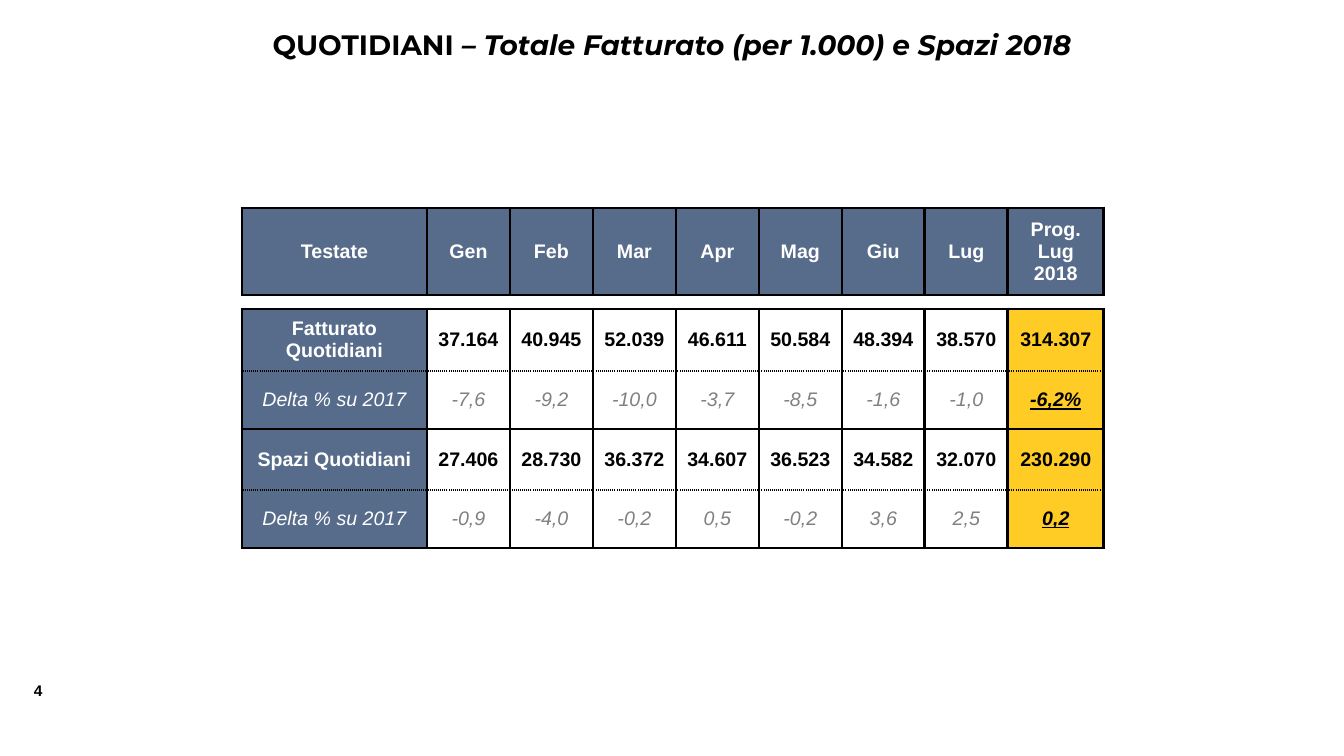
"""Build the slide on 2018 newspaper turnover and spaces."""
from lxml.etree import SubElement
from pptx import Presentation
from pptx.dml.color import RGBColor
from pptx.enum.text import MSO_ANCHOR, PP_ALIGN
from pptx.oxml.ns import qn
from pptx.util import Pt

EMU_PER_PX = 914400 / 100.8
BLACK = RGBColor(0x00, 0x00, 0x00)
WHITE = RGBColor(0xFF, 0xFF, 0xFF)
GREY = RGBColor(0x80, 0x80, 0x80)
BLUE = RGBColor(0x57, 0x6B, 0x8A)
YELLOW = RGBColor(0xFF, 0xCB, 0x25)
THICK, THIN, DOTTED = (2.25, "solid"), (1, "solid"), (1, "sysDot")


def px(n):
    return round(n * EMU_PER_PX)


def add_run(p, text, size, font, color, bold=True, italic=False, underline=False):
    r = p.add_run()
    r.text = text
    r.font.size = Pt(size)
    r.font.name = font
    r.font.color.rgb = color
    r.font.bold = bold
    r.font.italic = italic
    r.font.underline = underline


prs = Presentation()
prs.slide_width, prs.slide_height = px(1344), px(756)
s = prs.slides.add_slide(prs.slide_layouts[6])

number = s.shapes.add_textbox(px(24), px(676), px(42), px(29))
add_run(number.text_frame.paragraphs[0], "4", 11, "Arial", BLACK)

title = s.shapes.add_textbox(px(168), px(23), px(1008), px(44))
title.text_frame.word_wrap = True
p = title.text_frame.paragraphs[0]
p.alignment = PP_ALIGN.CENTER
add_run(p, "QUOTIDIANI ", 20, "Montserrat", BLACK)
add_run(p, "– Totale Fatturato (per 1.000) e Spazi 2018", 20, "Montserrat", BLACK, italic=True)

rows = [
    ["Testate", "Gen", "Feb", "Mar", "Apr", "Mag", "Giu", "Lug", "Prog.\nLug\n2018"],
    [""] * 9,
    ["Fatturato Quotidiani", "37.164", "40.945", "52.039", "46.611", "50.584", "48.394", "38.570", "314.307"],
    ["Delta % su 2017", "-7,6", "-9,2", "-10,0", "-3,7", "-8,5", "-1,6", "-1,0", "-6,2%"],
    ["Spazi Quotidiani", "27.406", "28.730", "36.372", "34.607", "36.523", "34.582", "32.070", "230.290"],
    ["Delta % su 2017", "-0,9", "-4,0", "-0,2", "0,5", "-0,2", "3,6", "2,5", "0,2"],
]
col_widths = [185] + [83] * 7 + [96]
row_heights = [87, 14, 62, 58, 61, 58]
row_edges = [THICK, THICK, THICK, DOTTED, THIN, DOTTED, THICK]
HEADER, GAP, LAST_COL = 0, 1, 8

table = s.shapes.add_table(6, 9, px(242), px(208), px(sum(col_widths)), px(sum(row_heights))).table
table.first_row = table.horz_banding = False
for column, width in zip(table.columns, col_widths):
    column.width = px(width)
for row, height in zip(table.rows, row_heights):
    row.height = px(height)

for i, values in enumerate(rows):
    side = None if i == GAP else THICK
    is_delta = i in (3, 5)
    for j, value in enumerate(values):
        cell = table.cell(i, j)
        is_label = i == HEADER or j == 0
        is_total = j == LAST_COL and not is_label
        cell.vertical_anchor = MSO_ANCHOR.MIDDLE
        padded = is_label and i != GAP
        cell.margin_left = cell.margin_right = px(10 if padded else 0)
        cell.margin_top = cell.margin_bottom = px(5 if padded else 0)

        tcPr = cell._tc.get_or_add_tcPr()
        edges = {"a:lnL": side, "a:lnR": side, "a:lnT": row_edges[i], "a:lnB": row_edges[i + 1]}
        for tag, edge in edges.items():
            ln = SubElement(tcPr, qn(tag))
            if edge is None:
                SubElement(ln, qn("a:noFill"))
                continue
            ln.set("w", str(Pt(edge[0])))
            SubElement(SubElement(ln, qn("a:solidFill")), qn("a:srgbClr"), val=str(BLACK))
            SubElement(ln, qn("a:prstDash"), val=edge[1])

        tf = cell.text_frame
        if i == GAP:
            cell.fill.background()
            SubElement(tf.paragraphs[0]._p, qn("a:endParaRPr"), sz="400")
            continue
        if is_label or is_total:
            cell.fill.solid()
            cell.fill.fore_color.rgb = BLUE if is_label else YELLOW
        else:
            cell.fill.background()

        color = WHITE if is_label else GREY if is_delta and not is_total else BLACK
        for k, line in enumerate(value.split("\n")):
            p = tf.add_paragraph() if k else tf.paragraphs[0]
            p.alignment = PP_ALIGN.CENTER
            add_run(p, line, 14, "Arial", color, bold=is_total or not is_delta,
                    italic=is_delta, underline=is_delta and is_total)

prs.save("out.pptx")
